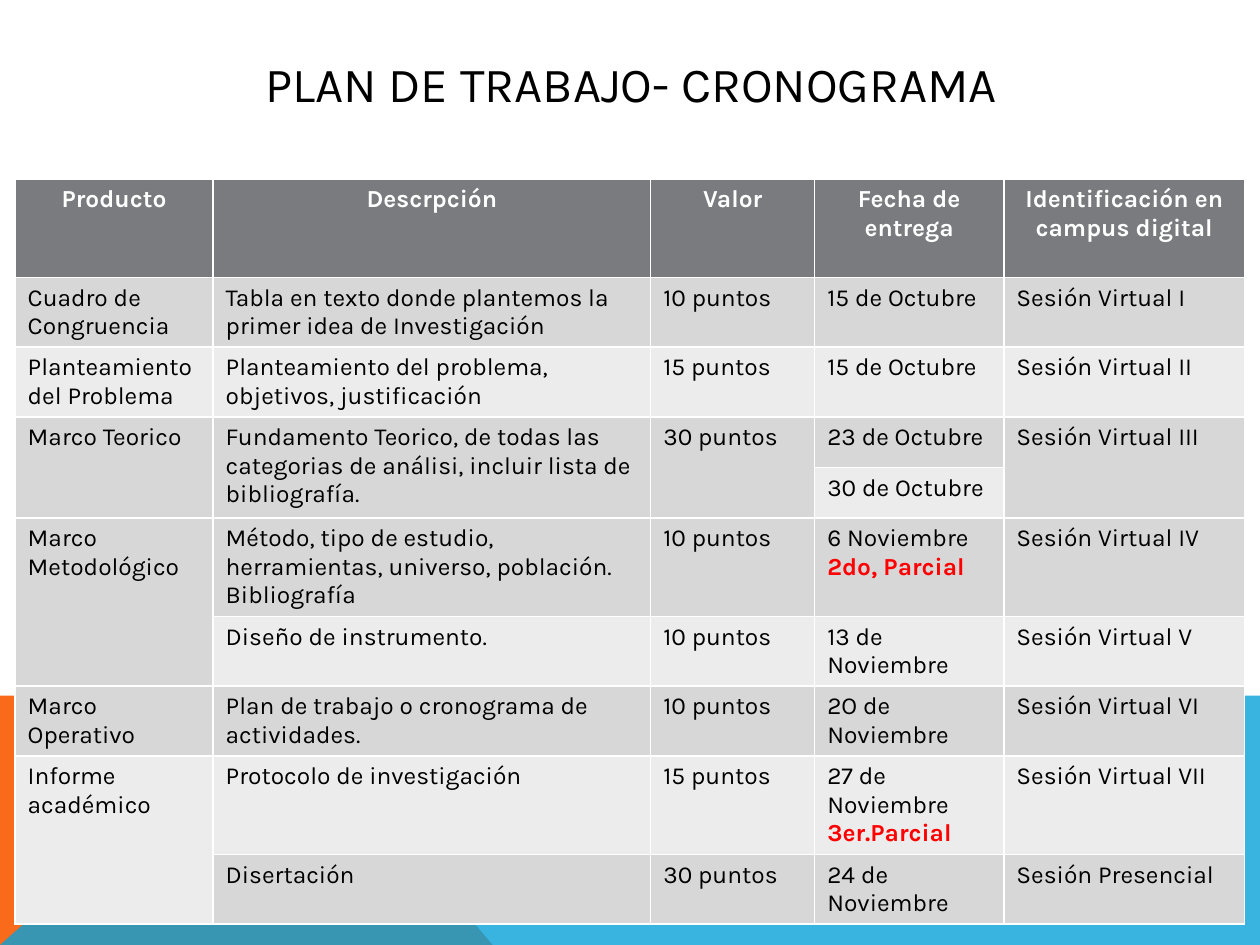
from lxml.etree import SubElement
from pptx import Presentation
from pptx.dml.color import RGBColor
from pptx.enum.text import MSO_ANCHOR as Anchor, PP_ALIGN as Align
from pptx.oxml.ns import qn
from pptx.util import Inches, Pt

FONT = "Karla"
BLACK, WHITE, RED = "000000", "FFFFFF", "FF0000"
HEADER_FILL = "797B7E"
BAND_FILLS = ["ECECEC", "D7D7D8"]
COLUMN_WIDTHS = [1.57, 3.47, 1.3, 1.5, 1.91]
ROW_HEIGHTS = [0.78, 0.55, 0.55, 0.4, 0.4, 0.78, 0.55, 0.55, 0.78, 0.55]
MERGES = [(3, 0), (3, 1), (3, 2), (3, 4), (5, 0), (8, 0)]
EXAM_NOTES = ["2do, Parcial", "3er.Parcial"]
ROWS = [
    ["Producto", "Descrpción", "Valor", "Fecha de entrega", "Identificación en campus digital"],
    ["Cuadro de Congruencia", "Tabla en texto donde plantemos la primer idea de Investigación",
     "10 puntos", "15 de Octubre", "Sesión Virtual I"],
    ["Planteamiento del Problema", "Planteamiento del problema, objetivos, justificación",
     "15 puntos", "15 de Octubre", "Sesión Virtual II"],
    ["Marco Teorico",
     "Fundamento Teorico, de todas las categorias de análisi, incluir lista de bibliografía.",
     "30 puntos", "23 de Octubre", "Sesión Virtual III"],
    ["", "", "", "30 de Octubre", ""],
    ["Marco Metodológico",
     "Método, tipo de estudio, herramientas, universo, población. Bibliografía",
     "10 puntos", "6 Noviembre\n2do, Parcial", "Sesión Virtual IV"],
    ["", "Diseño de instrumento.", "10 puntos", "13 de Noviembre", "Sesión Virtual V"],
    ["Marco Operativo", "Plan de trabajo o cronograma de actividades.",
     "10 puntos", "2O de Noviembre", "Sesión Virtual VI"],
    ["Informe académico", "Protocolo de investigación",
     "15 puntos", "27 de Noviembre\n3er.Parcial", "Sesión Virtual VII"],
    ["", "Disertación", "30 puntos", "24 de Noviembre", "Sesión Presencial"],
]


def paint(fill, color):
    """Make a fill solid in the given hex colour."""
    fill.solid()
    fill.fore_color.rgb = RGBColor.from_string(color)


def format_paragraph(paragraph, size, color, bold=False, align=Align.LEFT):
    """Set the font and alignment of a whole paragraph."""
    paragraph.alignment = align
    font = paragraph.font
    font.name, font.size, font.bold = FONT, Pt(size), bold
    font.color.rgb = RGBColor.from_string(color)


def add_polygon(slide, points, color, opacity=100):
    """Draw a closed, borderless polygon through points in inches."""
    corners = [(Inches(x), Inches(y)) for x, y in points]
    builder = slide.shapes.build_freeform(*corners[0])
    builder.add_line_segments(corners[1:], close=True)
    shape = builder.convert_to_shape()
    shape.shadow.inherit = False
    shape.line.fill.background()
    paint(shape.fill, color)
    if opacity < 100:
        color_element = shape.fill._xPr.find(qn("a:solidFill"))[0]
        SubElement(color_element, qn("a:alpha")).set("val", str(opacity * 1000))


def add_footer_band(slide, left, top, width, height):
    """Draw the orange wedge and the translucent blue band over it."""
    right, bottom, peak = left + width, top + height, left + 2.23
    add_polygon(slide, [(left, bottom), (left, top), (peak, top), (left + 3.91, bottom)], "F96A1B")
    add_polygon(slide, [(left, bottom), (peak, top), (right, top), (right, bottom)], "08A1D9", 80)


def add_title(slide, left, top, width, height):
    """Place and format the slide title."""
    title = slide.shapes.title
    title.left, title.top = Inches(left), Inches(top)
    title.width, title.height = Inches(width), Inches(height)
    frame = title.text_frame
    frame.text = "PLAN DE TRABAJO- CRONOGRAMA"
    frame.vertical_anchor = Anchor.MIDDLE
    format_paragraph(frame.paragraphs[0], 28, BLACK, align=Align.CENTER)


def fill_cell(cell, text, row_index):
    """Write one cell, styled as header, band or exam note."""
    header = row_index == 0
    paint(cell.fill, HEADER_FILL if header else BAND_FILLS[row_index % 2])
    cell.text = text
    for paragraph in cell.text_frame.paragraphs:
        if header:
            format_paragraph(paragraph, 14, WHITE, True, Align.CENTER)
        else:
            note = paragraph.text in EXAM_NOTES
            format_paragraph(paragraph, 14, RED if note else BLACK, note)


def add_schedule(slide, left, top, width, height):
    """Build the schedule table with its merged cells."""
    table = slide.shapes.add_table(len(ROWS), len(COLUMN_WIDTHS), Inches(left), Inches(top),
                                   Inches(width), Inches(height)).table
    for column, share in zip(table.columns, COLUMN_WIDTHS):
        column.width = Inches(width * share / sum(COLUMN_WIDTHS))
    for row, share in zip(table.rows, ROW_HEIGHTS):
        row.height = Inches(height * share / sum(ROW_HEIGHTS))
    for row_index, texts in enumerate(ROWS):
        for column_index, text in enumerate(texts):
            fill_cell(table.cell(row_index, column_index), text, row_index)
    for row_index, column_index in MERGES:
        table.cell(row_index, column_index).merge(table.cell(row_index + 1, column_index))


def main():
    """Build the one-slide presentation and save it."""
    presentation = Presentation()
    presentation.slide_width, presentation.slide_height = Inches(10), Inches(7.5)
    slide = presentation.slides.add_slide(presentation.slide_layouts[5])
    add_footer_band(slide, 0, 5.52, 10, 1.98)
    add_title(slide, 0.9, 0.36, 8.22, 0.6)
    add_schedule(slide, 0.12, 1.42, 9.76, 5.9)
    presentation.save("out.pptx")


if __name__ == "__main__":
    main()
